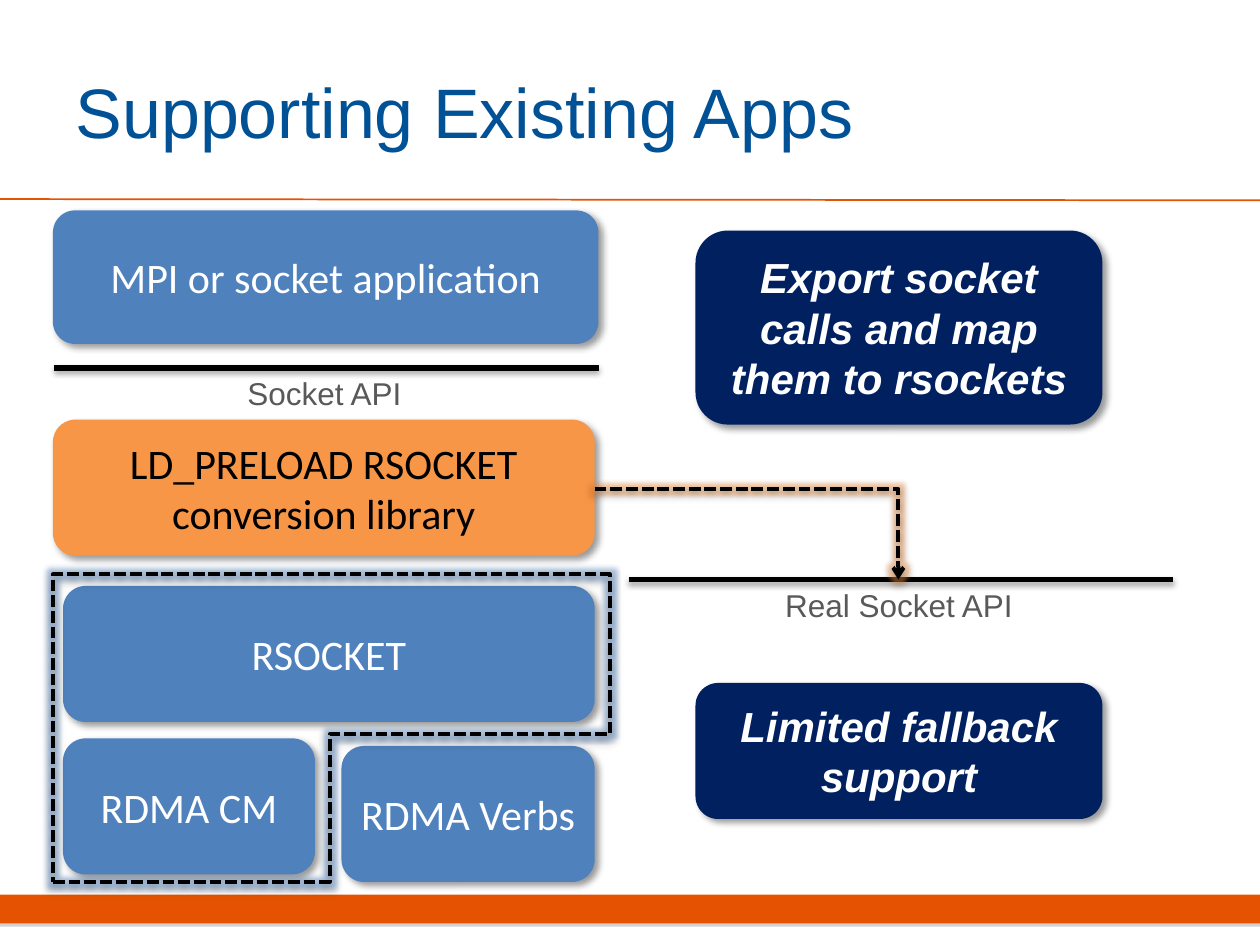
from lxml.etree import SubElement
from pptx import Presentation
from pptx.dml.color import RGBColor
from pptx.enum.dml import MSO_LINE
from pptx.enum.shapes import MSO_CONNECTOR, MSO_SHAPE
from pptx.enum.text import MSO_ANCHOR, PP_ALIGN
from pptx.oxml.ns import qn
from pptx.util import Inches, Pt

COLORS = {
    "title": "005195", "accent": "E55302", "blue": "4F81BD",
    "orange": "F79646", "navy": "002060", "black": "000000",
    "white": "FFFFFF", "label": "595959", "gray": "808080",
}
BLOCK_SHADOW = ("black", 40, 4, 3, 45)
LINE_SHADOW = ("black", 38, 3.1, 1.6, 90)
OUTLINE_SHADOW = ("black", 35, 3.1, 1.8, 90)
BAR_SHADOW = ("gray", 35, 0, 1.8, 90)


def rgb(name):
    return RGBColor.from_string(COLORS[name])


def add_effects(part, shadow=None, glow=None):
    properties = part._element.spPr
    effects = properties.find(qn("a:effectLst"))
    if effects is None:
        effects = SubElement(properties, qn("a:effectLst"))

    def add_effect(tag, color, alpha, **attributes):
        effect = SubElement(effects, qn(tag), attributes)
        tint = SubElement(effect, qn("a:srgbClr"), val=COLORS[color])
        SubElement(tint, qn("a:alpha"), val=str(alpha * 1000))

    if glow:
        add_effect("a:glow", glow, 40, rad=str(Pt(5)))
    if shadow:
        color, alpha, blur, distance, angle = shadow
        add_effect("a:outerShdw", color, alpha, blurRad=str(Pt(blur)),
                   dist=str(Pt(distance)), dir=str(angle * 60000),
                   rotWithShape="0")


def write_text(frame, text, font="Calibri", size=24, color="white", bold=False,
               italic=False, align=PP_ALIGN.CENTER, anchor=MSO_ANCHOR.MIDDLE):
    frame.word_wrap = True
    frame.vertical_anchor = anchor
    paragraph = frame.paragraphs[0]
    paragraph.alignment = align
    run = paragraph.add_run()
    run.text = text
    run.font.name = font
    run.font.size = Pt(size)
    run.font.bold = bold
    run.font.italic = italic
    run.font.color.rgb = rgb(color)


def add_block(slide, box, fill, text=None, kind=MSO_SHAPE.ROUNDED_RECTANGLE,
              shadow=BLOCK_SHADOW, **text_format):
    block = slide.shapes.add_shape(kind, *map(Inches, box))
    block.fill.solid()
    block.fill.fore_color.rgb = rgb(fill)
    block.line.fill.background()
    block.shadow.inherit = False
    add_effects(block, shadow)
    if text:
        write_text(block.text_frame, text, **text_format)


def add_line(slide, start, end, color="black", width=3, shadow=LINE_SHADOW):
    line = slide.shapes.add_connector(
        MSO_CONNECTOR.STRAIGHT, *map(Inches, (*start, *end)))
    line.line.color.rgb = rgb(color)
    line.line.width = Pt(width)
    add_effects(line, shadow)


def dash_line(part):
    part.line.color.rgb = rgb("black")
    part.line.width = Pt(2.25)
    part.line.dash_style = MSO_LINE.SQUARE_DOT


def add_frame(slide, box):
    left, top, width, height = box
    add_block(slide, (left, top + height - 0.4, width, 0.23), "accent",
              kind=MSO_SHAPE.RECTANGLE, shadow=BAR_SHADOW)
    add_line(slide, (left, top + 1.58), (left + width, top + 1.59),
             "accent", 1, None)


def add_title(slide, box, text):
    title = slide.shapes.title
    title.left, title.top, title.width, title.height = map(Inches, box)
    write_text(title.text_frame, text, font="Arial", size=40, color="title",
               align=PP_ALIGN.LEFT)


def add_api_boundary(slide, box, text):
    left, top, width, height = box
    add_line(slide, (left, top), (left + width, top))
    label = slide.shapes.add_textbox(
        *map(Inches, (left, top, width - 0.03, height)))
    write_text(label.text_frame, text, font="Arial", size=18, color="label",
               anchor=MSO_ANCHOR.TOP)


def add_stack(slide, box):
    left, top, width, height = box
    inner = left + 0.08
    right = left + 4.3
    bottom = top + height
    block_height = 1.08
    add_block(slide, (left, top, width, 1.06), "blue",
              "MPI or socket application")
    add_block(slide, (left, top + 1.66, right - left, block_height), "orange",
              "LD_PRELOAD RSOCKET conversion library", color="black")
    add_block(slide, (inner, top + 2.98, right - inner, block_height), "blue",
              "RSOCKET")
    add_block(slide, (right - 2.01, bottom - block_height, 2.01, block_height),
              "blue", "RDMA Verbs")
    add_block(slide, (inner, top + 4.19, 2, block_height), "blue", "RDMA CM")
    add_api_boundary(slide, (left + 0.01, top + 1.25, width - 0.01, 0.4),
                     "Socket API")


def add_fallback_arrow(slide, box):
    left, top, width, height = box
    arrow = slide.shapes.add_connector(
        MSO_CONNECTOR.ELBOW,
        *map(Inches, (left, top, left + width, top + height)))
    properties = arrow._element.spPr
    properties.find(qn("a:prstGeom")).set("prst", "bentConnector2")
    dash_line(arrow)
    SubElement(properties.find(qn("a:ln")), qn("a:tailEnd"), type="arrow")
    add_effects(arrow, LINE_SHADOW, "orange")


def add_notes_column(slide, box):
    left, top, width, height = box
    note_format = dict(font="Arial", bold=True, italic=True)
    add_block(slide, (left, top + height - 1.08, width, 1.08), "navy",
              "Limited fallback support", **note_format)
    add_block(slide, (left, top, width, 1.54), "navy",
              "Export socket calls and map them to rsockets", **note_format)


def add_rsocket_outline(slide, box):
    outline = slide.shapes.add_shape(MSO_SHAPE.RECTANGLE, *map(Inches, box))
    properties = outline._element.spPr
    properties.find(qn("a:xfrm")).set("flipV", "1")
    geometry = properties.find(qn("a:prstGeom"))
    geometry.set("prst", "corner")
    guides = geometry.find(qn("a:avLst"))
    for guide, share in (("adj1", 52000), ("adj2", 90000)):
        SubElement(guides, qn("a:gd"), name=guide, fmla=f"val {share}")
    outline.fill.background()
    dash_line(outline)
    outline.shadow.inherit = False
    add_effects(outline, OUTLINE_SHADOW, "blue")


def main():
    presentation = Presentation()
    presentation.slide_width = Inches(10)
    presentation.slide_height = Inches(7.5)
    slide = presentation.slides.add_slide(presentation.slide_layouts[5])
    add_frame(slide, (0, 0, 10, 7.5))
    add_title(slide, (0.5, 0.25, 8.17, 1.25), "Supporting Existing Apps")
    add_stack(slide, (0.42, 1.67, 4.33, 5.33))
    add_api_boundary(slide, (4.99, 4.6, 4.32, 0.4), "Real Socket API")
    add_fallback_arrow(slide, (4.72, 3.88, 2.41, 0.72))
    add_notes_column(slide, (5.52, 1.83, 3.23, 4.67))
    add_rsocket_outline(slide, (0.42, 4.56, 4.42, 2.44))
    presentation.save("out.pptx")


if __name__ == "__main__":
    main()
